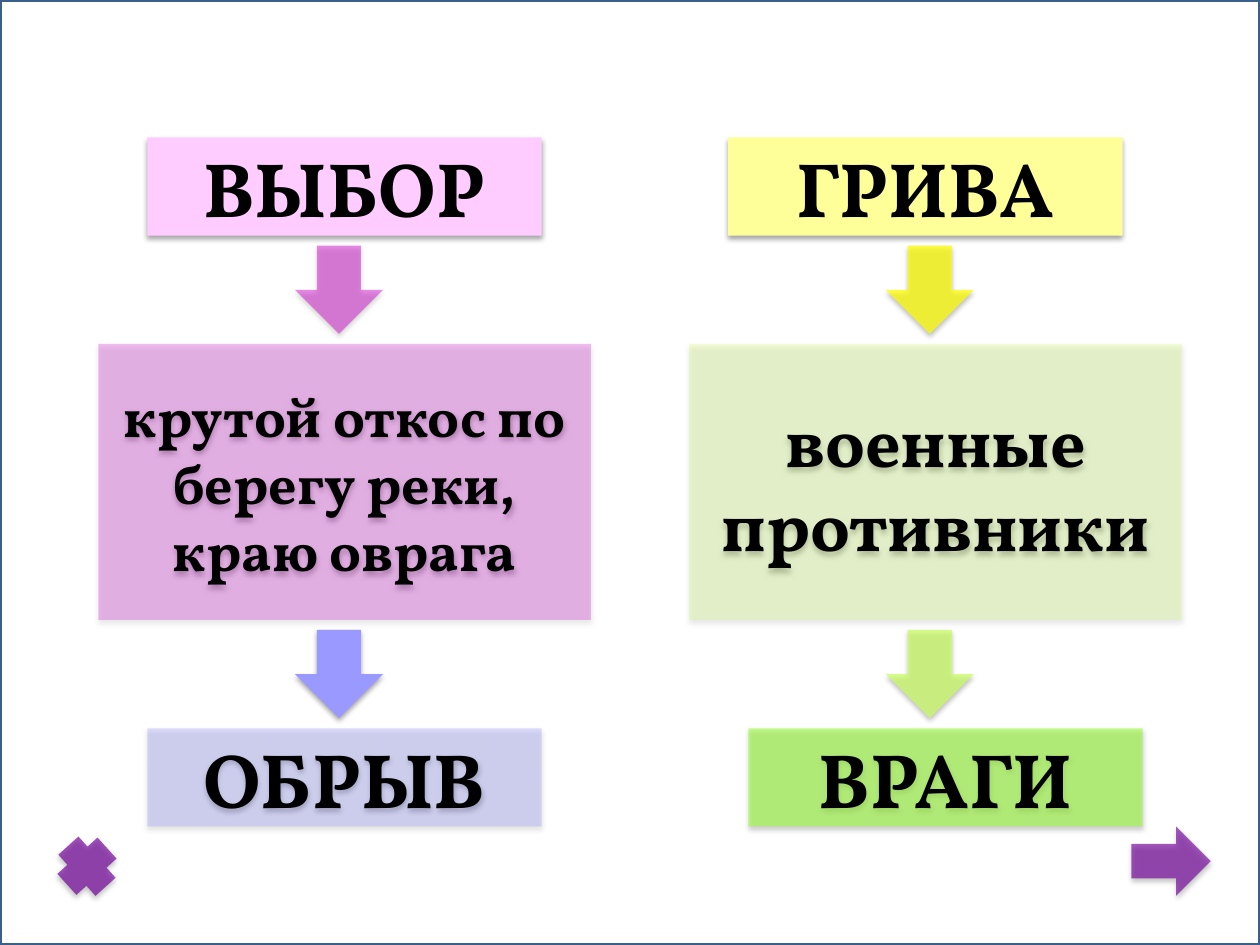
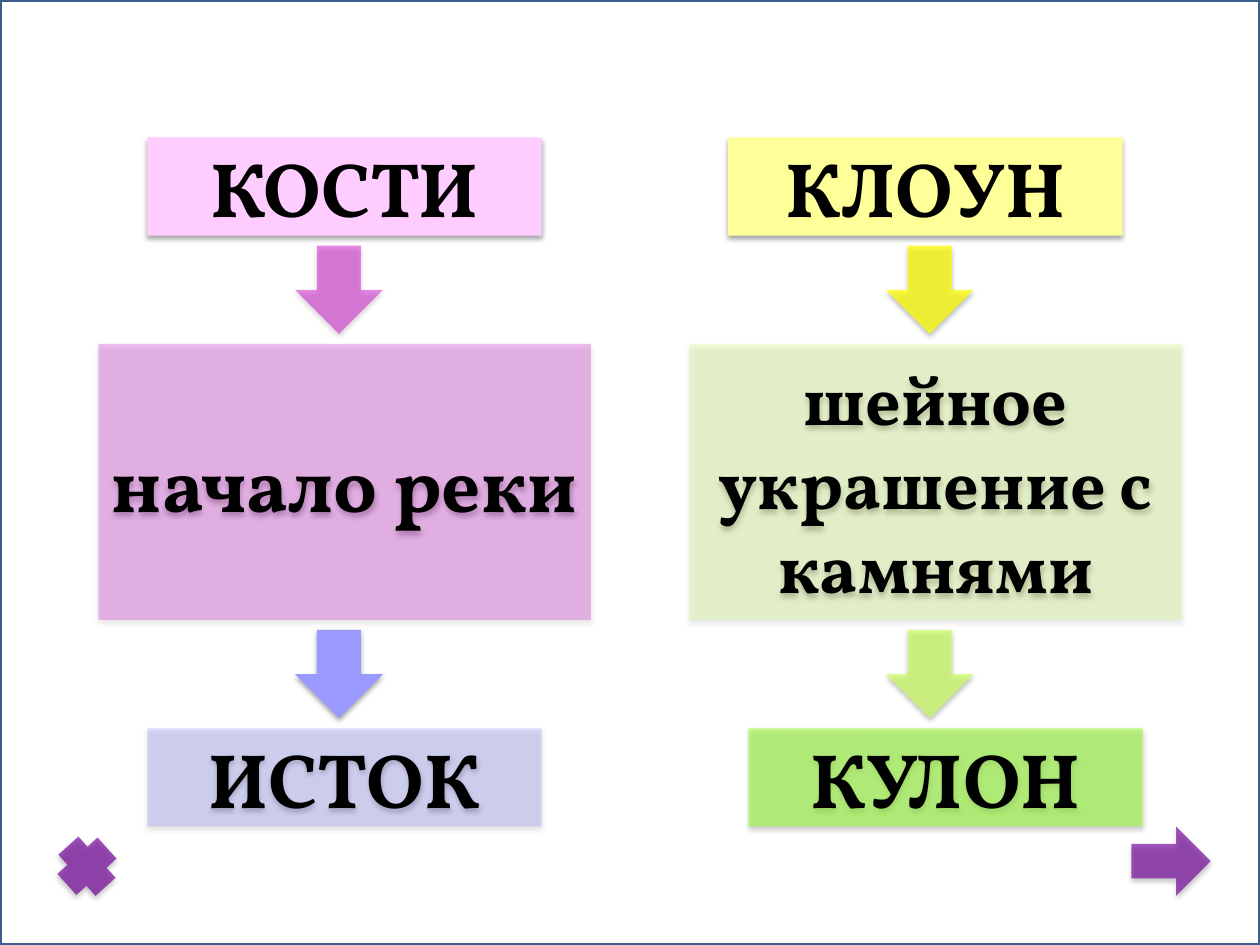
"""Build two anagram slides: a word, a hint below it, and the answer made of the same letters."""
from lxml.etree import SubElement
from pptx import Presentation
from pptx.dml.color import RGBColor
from pptx.enum.shapes import MSO_SHAPE
from pptx.enum.text import MSO_ANCHOR, PP_ALIGN
from pptx.oxml.ns import qn
from pptx.util import Inches, Pt

SLIDES = [
    [("ВЫБОР", "крутой откос по берегу реки, краю оврага", 32, "ОБРЫВ"),
     ("ГРИВА", "военные противники", 40, "ВРАГИ")],
    [("КОСТИ", "начало реки", 44, "ИСТОК"),
     ("КЛОУН", "шейное украшение с камнями", 40, "КУЛОН")],
]

COLOURS = {
    "paper": "FFFFFF", "frame": "3A5F8C", "ink": "000000", "button": "72009A",
    "pink": "FFCCFF", "magenta": "CC00CC", "blue": "9999FF",
    "cream": "FFFF99", "yellow": "FFFF00", "lime": "CCFF66", "green": "99FF33",
}

# Each fill is a colour and its opacity in percent, from the top step to the bottom one.
COLUMNS = [
    {"lefts": (1.17, 2.34, 0.78, 2.34, 1.17),
     "fills": (("pink", 100), ("magenta", 45), ("magenta", 25), ("blue", 100), ("blue", 31))},
    {"lefts": (5.78, 7.03, 5.47, 7.03, 5.94),
     "fills": (("cream", 100), ("yellow", 72), ("lime", 25), ("lime", 72), ("green", 56))},
]

FONT = "Vollkorn"
WORD_SIZE = 44
TOP, GAP = 1.09, 0.08
WORD_BOX, HINT_BOX, ARROW = (3.13, 0.78), (3.91, 2.19), (0.7, 0.7)
STEPS = (WORD_BOX, ARROW, HINT_BOX, ARROW, WORD_BOX)


def rgb(name):
    return RGBColor.from_string(COLOURS[name])


def add_alpha(colour_element, percent):
    SubElement(colour_element, qn("a:alpha")).set("val", str(percent * 1000))


def add_shadow(shape):
    shape.shadow.inherit = False
    effects = shape.element.spPr.find(qn("a:effectLst"))
    shadow = SubElement(effects, qn("a:outerShdw"), blurRad=str(Pt(3.1)),
                        dist=str(Pt(1.8)), dir="5400000", rotWithShape="0")
    colour = SubElement(shadow, qn("a:srgbClr"), val=COLOURS["ink"])
    add_alpha(colour, 35)


def add_figure(slide, preset, left, top, size, fill):
    colour, opacity = fill
    figure = slide.shapes.add_shape(preset, *map(Inches, (left, top, *size)))
    figure.fill.solid()
    figure.fill.fore_color.rgb = rgb(colour)
    if opacity < 100:
        add_alpha(figure.element.spPr.find(qn("a:solidFill"))[0], opacity)
    figure.line.fill.background()
    add_shadow(figure)
    return figure


def write(box, text, size):
    frame = box.text_frame
    frame.text = text
    frame.word_wrap = True
    frame.vertical_anchor = MSO_ANCHOR.MIDDLE
    paragraph = frame.paragraphs[0]
    paragraph.alignment = PP_ALIGN.CENTER
    font = paragraph.runs[0].font
    font.name, font.size, font.bold = FONT, Pt(size), True
    font.color.rgb = rgb("ink")


def add_column(slide, column, anagram):
    word, hint, hint_size, answer = anagram
    labels = ((word, WORD_SIZE), None, (hint, hint_size), None, (answer, WORD_SIZE))
    top = TOP
    for left, fill, size, label in zip(column["lefts"], column["fills"], STEPS, labels):
        preset = MSO_SHAPE.RECTANGLE if label else MSO_SHAPE.DOWN_ARROW
        figure = add_figure(slide, preset, left, top, size, fill)
        if label:
            write(figure, *label)
        top += size[1] + GAP


def add_buttons(slide):
    add_figure(slide, MSO_SHAPE.RIGHT_ARROW, 8.98, 6.56, (0.63, 0.55), ("button", 65))
    close = add_figure(slide, MSO_SHAPE.CROSS, 0.47, 6.66, (0.44, 0.43), ("button", 67))
    close.rotation = 47.9


def move_frame_to_layout(deck, slide, layout):
    for placeholder in list(layout.placeholders):
        layout.shapes.element.remove(placeholder.element)
    frame = slide.shapes.add_shape(MSO_SHAPE.RECTANGLE, 0, 0, deck.slide_width, deck.slide_height)
    frame.fill.solid()
    frame.fill.fore_color.rgb = rgb("paper")
    frame.line.color.rgb = rgb("frame")
    frame.line.width = Pt(2)
    frame.shadow.inherit = False
    layout.shapes.element.append(frame.element)


def main():
    deck = Presentation()
    deck.slide_width, deck.slide_height = Inches(10), Inches(7.5)
    layout = deck.slide_layouts[6]
    for number, anagrams in enumerate(SLIDES):
        slide = deck.slides.add_slide(layout)
        if number == 0:
            move_frame_to_layout(deck, slide, layout)
        for column, anagram in zip(COLUMNS, anagrams):
            add_column(slide, column, anagram)
        add_buttons(slide)
    deck.save("out.pptx")


if __name__ == "__main__":
    main()
